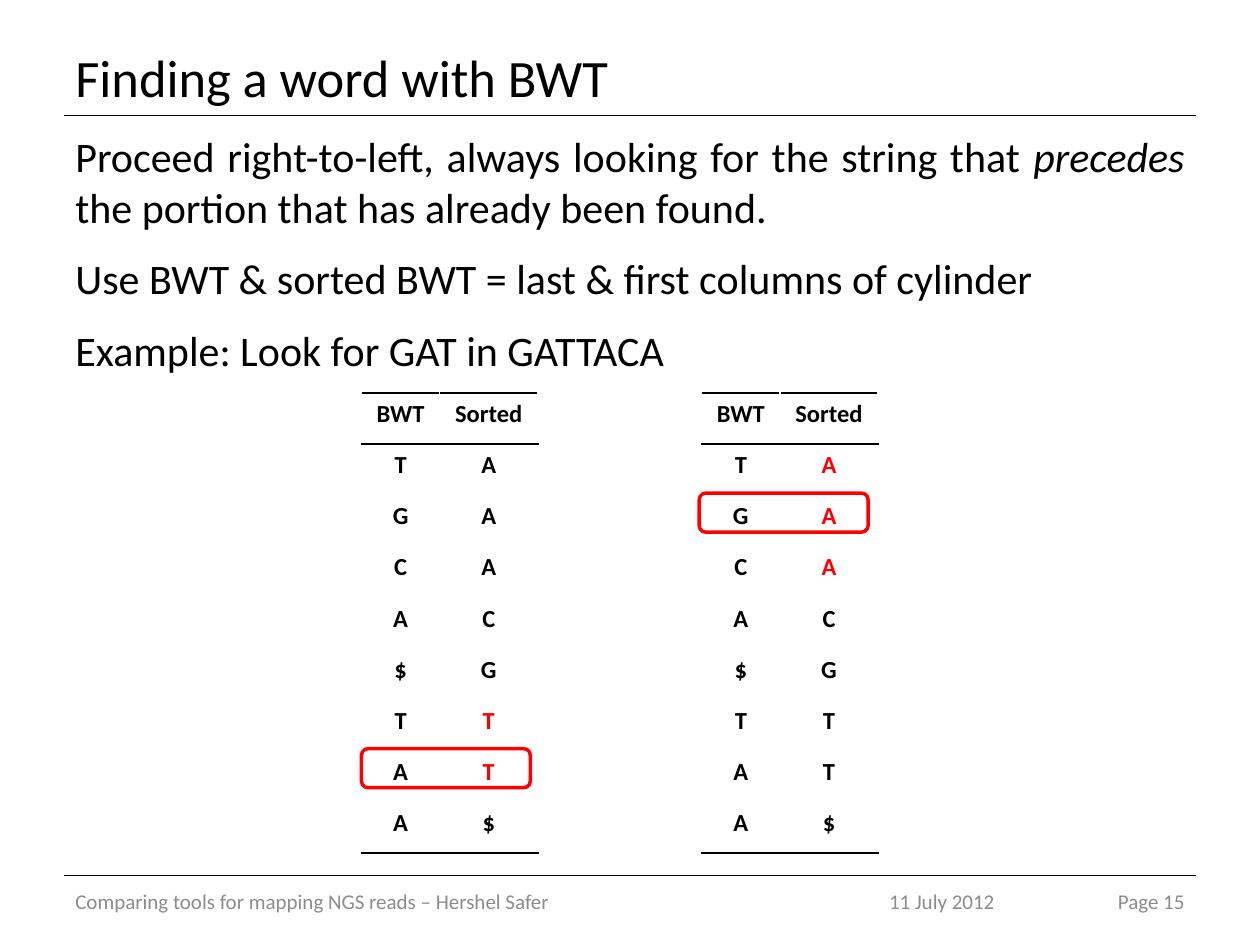
from lxml.etree import SubElement
from pptx import Presentation
from pptx.dml.color import RGBColor
from pptx.enum.shapes import MSO_CONNECTOR, MSO_SHAPE
from pptx.enum.text import MSO_ANCHOR, PP_ALIGN
from pptx.oxml import parse_xml
from pptx.oxml.ns import nsdecls, qn
from pptx.util import Pt

THEME = {
    "font": "Calibri",
    "ink": "000000", "paper": "FFFFFF", "muted": "8C8C8C", "accent": "FF0000",
    "title": 30, "body": 24, "footer": 12, "cell": 14,
}

TITLE = "Finding a word with BWT"
# Each paragraph is a list of (text, italic) runs
BODY = [
    [("Proceed right-to-left, always looking for the string that ", False),
     ("precedes", True),
     (" the portion that has already been found.", False)],
    [("Use BWT & sorted BWT = last & first columns of cylinder", False)],
    [("Example: Look for GAT in GATTACA", False)],
]
# text, left, width, alignment
FOOTERS = [
    ("Comparing tools for mapping NGS reads – Hershel Safer", 36, 432, PP_ALIGN.LEFT),
    ("Page 15", 609, 75, PP_ALIGN.RIGHT),
    ("11 July 2012", 473, 130.4, PP_ALIGN.CENTER),
]
HEADER = ("BWT", "Sorted")
BWT, SORTED = "TGCA$TAA", "AAACGTT$"
# Search steps: table left, box left, letter already found, row of its match
STEPS = [(206.6, 206.6, "T", 7), (401, 399.6, "A", 2)]

RULE_LEFT, RULE_RIGHT, RULE_TOPS = 36.7, 683.3, (66.2, 500.4)
TABLE_TOP, ROW_H, COL_WIDTHS = 224.6, 29.2, (44.7, 56.1)
BOX_W, BOX_H, BOX_RISE = 96.5, 22.3, 1.2


def rgb(name):
    return RGBColor.from_string(THEME[name])


def add_run(p, text, size, color="ink", **formats):
    r = p.add_run()
    r.text = text
    r.font.color.rgb = rgb(color)
    formats = {"name": THEME["font"], "size": Pt(THEME[size]), **formats}
    for key, value in formats.items():
        setattr(r.font, key, value)


def add_text(slide, box, paragraphs, size, color="ink", anchor=MSO_ANCHOR.MIDDLE,
             **formats):
    tf = slide.shapes.add_textbox(*map(Pt, box)).text_frame
    tf.word_wrap = True
    tf.vertical_anchor = anchor
    for i, runs in enumerate(paragraphs):
        p = tf.add_paragraph() if i else tf.paragraphs[0]
        for key, value in formats.items():
            setattr(p, key, value)
        for text, italic in runs:
            add_run(p, text, size, color, italic=italic)


def add_rule(slide, top):
    line = slide.shapes.add_connector(
        MSO_CONNECTOR.STRAIGHT, *map(Pt, (RULE_LEFT, top, RULE_RIGHT, top)))
    line.line.color.rgb = rgb("ink")
    line.line.width = Pt(0.75)
    SubElement(line._element.spPr, qn("a:effectLst"))


def set_borders(cell, top, bottom):
    """Give a cell 1 pt borders: paper-coloured sides, named top and bottom."""
    sides = {"L": "paper", "R": "paper", "T": top, "B": bottom}
    for i, (side, color) in enumerate(sides.items()):
        cell._tc.get_or_add_tcPr().insert(i, parse_xml(
            f'<a:ln{side} {nsdecls("a")} w="{Pt(1)}"><a:solidFill>'
            f'<a:srgbClr val="{THEME[color]}"/></a:solidFill></a:ln{side}>'))


def add_bwt_table(slide, left, found):
    """Add the two columns, with the found letter marked among the sorted ones."""
    rows = [HEADER, *zip(BWT, SORTED)]
    last = len(rows) - 1
    table = slide.shapes.add_table(
        len(rows), len(HEADER), Pt(left), Pt(TABLE_TOP),
        Pt(sum(COL_WIDTHS)), Pt(ROW_H * len(rows))).table
    table.first_row = table.horz_banding = False
    for col, width in zip(table.columns, COL_WIDTHS):
        col.width = Pt(width)
    for i, row in enumerate(rows):
        table.rows[i].height = Pt(ROW_H)
        for j, text in enumerate(row):
            cell = table.cell(i, j)
            cell.fill.background()
            set_borders(cell, "ink" if i < 2 else "paper",
                        "ink" if i in (0, last) else "paper")
            p = cell.text_frame.paragraphs[0]
            p.alignment = PP_ALIGN.CENTER
            marked = j == 1 and text == found
            add_run(p, text, "cell", "accent" if marked else "ink", bold=True)


def add_match_box(slide, left, row):
    top = TABLE_TOP + row * ROW_H - BOX_RISE
    sp = slide.shapes.add_shape(MSO_SHAPE.ROUNDED_RECTANGLE,
                                *map(Pt, (left, top, BOX_W, BOX_H)))
    sp.shadow.inherit = False
    sp.fill.background()
    sp.line.color.rgb = rgb("accent")
    sp.line.width = Pt(2)


def main():
    prs = Presentation()
    prs.slide_width, prs.slide_height = Pt(720), Pt(540)
    slide = prs.slides.add_slide(prs.slide_layouts[6])
    for top in RULE_TOPS:
        add_rule(slide, top)
    add_text(slide, (36, 21.6, 648, 44), [[(TITLE, False)]], "title")
    add_text(slide, (36, 71.3, 648, 425.5), BODY, "body", anchor=MSO_ANCHOR.TOP,
             alignment=PP_ALIGN.JUSTIFY, space_after=Pt(12))
    for text, left, width, align in FOOTERS:
        add_text(slide, (left, RULE_TOPS[1], width, 28.8), [[(text, False)]],
                 "footer", "muted", alignment=align)
    for left, box_left, found, row in STEPS:
        add_bwt_table(slide, left, found)
        add_match_box(slide, box_left, row)
    prs.save("out.pptx")


if __name__ == "__main__":
    main()
